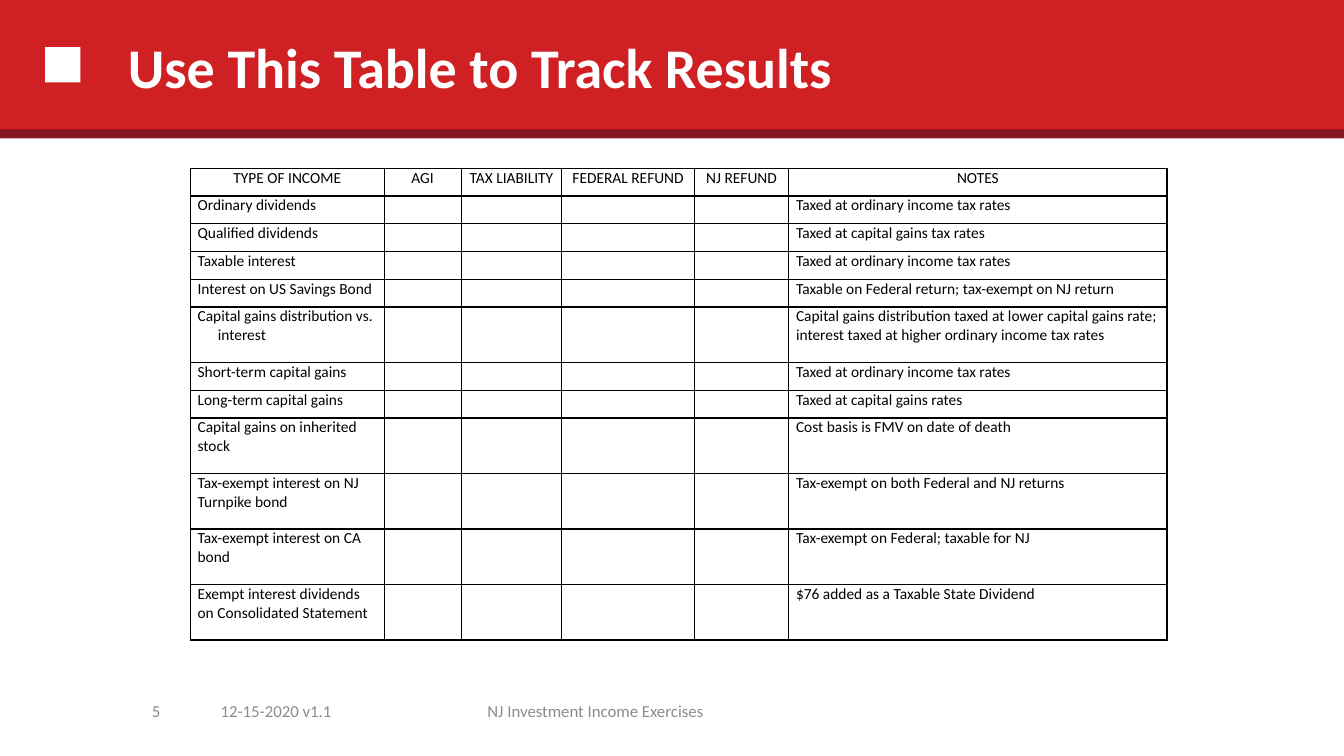
from lxml.etree import SubElement
from pptx import Presentation
from pptx.dml.color import RGBColor
from pptx.enum.shapes import MSO_SHAPE
from pptx.enum.text import MSO_ANCHOR, PP_ALIGN
from pptx.oxml.ns import qn
from pptx.util import Cm, Pt

FONT = "Calibri"
HEADINGS = ["TYPE OF INCOME", "AGI", "TAX LIABILITY", "FEDERAL REFUND", "NJ REFUND", "NOTES"]
COLUMN_WIDTHS = [4.88, 1.94, 2.54, 3.34, 2.38, 9.53]
LINE_HEIGHT = 0.7
INCOME_ROWS = [
    ("Ordinary dividends", "Taxed at ordinary income tax rates", 1),
    ("Qualified dividends", "Taxed at capital gains tax rates", 1),
    ("Taxable interest", "Taxed at ordinary income tax rates", 1),
    ("Interest on US Savings Bond", "Taxable on Federal return; tax-exempt on NJ return", 1),
    ("Capital gains distribution vs. interest",
     "Capital gains distribution taxed at lower capital gains rate; "
     "interest taxed at higher ordinary income tax rates", 2),
    ("Short-term capital gains", "Taxed at ordinary income tax rates", 1),
    ("Long-term capital gains", "Taxed at capital gains rates", 1),
    ("Capital gains on inherited stock", "Cost basis is FMV on date of death", 2),
    ("Tax-exempt interest on NJ Turnpike bond", "Tax-exempt on both Federal and NJ returns", 2),
    ("Tax-exempt interest on CA bond", "Tax-exempt on Federal; taxable for NJ", 2),
    ("Exempt interest dividends on Consolidated Statement",
     "$76 added as a Taxable State Dividend", 2),
]
HANGING_ROW = "Capital gains distribution vs. interest"


def color(value):
    """Turn a hex string into a colour."""
    return RGBColor.from_string(value)


def style(para, size, value, align=PP_ALIGN.LEFT, bold=False):
    """Set the font and alignment of a paragraph."""
    para.alignment = align
    para.font.name = FONT
    para.font.size = Pt(size)
    para.font.bold = bold
    para.font.color.rgb = color(value)


def add_block(page, left, top, width, height, fill):
    """Add a plain filled rectangle."""
    block = page.shapes.add_shape(MSO_SHAPE.RECTANGLE, Cm(left), Cm(top), Cm(width), Cm(height))
    block.shadow.inherit = False
    block.fill.solid()
    block.fill.fore_color.rgb = color(fill)
    block.line.fill.background()


def add_header(page, left, top, width, height):
    """Fill the header band and place the title on it."""
    add_block(page, left, top, width, height, "CF2124")
    add_block(page, left + 1.14, top + 1.21, 0.89, 0.89, "FFFFFF")
    add_block(page, left, top + height - 0.1, width, 0.23, "841721")
    title = page.shapes.title
    title.left, title.top = Cm(left + 2.97), Cm(top + 0.1)
    title.width, title.height = Cm(27.08), Cm(3.18)
    title.text_frame.text = "Use This Table to Track Results"
    title.text_frame.vertical_anchor = MSO_ANCHOR.MIDDLE
    style(title.text_frame.paragraphs[0], 40, "FFFFFF", bold=True)
    title.element.getparent().append(title.element)


def add_borders(cell):
    """Draw a thin black line on each side of a cell."""
    properties = cell._tc.get_or_add_tcPr()
    for position, side in enumerate(("lnL", "lnR", "lnT", "lnB")):
        line = SubElement(properties, qn(f"a:{side}"), w=str(Pt(1)))
        fill = SubElement(line, qn("a:solidFill"))
        SubElement(fill, qn("a:srgbClr"), val="000000")
        properties.insert(position, line)


def fill_cell(cell, text, align):
    """Write one table cell with its insets, font and borders."""
    cell.margin_left = cell.margin_right = Cm(0.18)
    cell.margin_top = cell.margin_bottom = 0
    cell.fill.background()
    cell.text = text
    para = cell.text_frame.paragraphs[0]
    style(para, 11, "000000", align)
    if not text:
        SubElement(para._p, qn("a:endParaRPr"), sz="1100")
    if text == HANGING_ROW:
        indent = Cm(0.51)
        para._p.get_or_add_pPr().set("marL", str(indent))
        para._p.get_or_add_pPr().set("indent", str(-indent))
    add_borders(cell)


def add_results_table(page, left, top):
    """Add the tracking table with its blank result columns."""
    blanks = [""] * (len(HEADINGS) - 2)
    rows = [HEADINGS] + [[income, *blanks, note] for income, note, _ in INCOME_ROWS]
    heights = [LINE_HEIGHT] + [LINE_HEIGHT * lines for _, _, lines in INCOME_ROWS]
    frame = page.shapes.add_table(len(rows), len(HEADINGS), Cm(left), Cm(top),
                                  Cm(sum(COLUMN_WIDTHS)), Cm(sum(heights)))
    table = frame.table
    table.first_row = table.horz_banding = False
    for column, width in zip(table.columns, COLUMN_WIDTHS):
        column.width = Cm(width)
    for index, (row, height) in enumerate(zip(table.rows, heights)):
        row.height = Cm(height)
        align = PP_ALIGN.LEFT if index else PP_ALIGN.CENTER
        for cell, text in zip(row.cells, rows[index]):
            fill_cell(cell, text, align)


def add_footer(page, left, top, height):
    """Add the page number, version date and deck name."""
    parts = [
        ("5", 0, 2.59, PP_ALIGN.RIGHT),
        ("12-15-2020 v1.1", 3.61, 3.71, PP_ALIGN.LEFT),
        ("NJ Investment Income Exercises", 7.95, 10.72, PP_ALIGN.CENTER),
    ]
    for text, offset, width, align in parts:
        box = page.shapes.add_textbox(Cm(left + offset), Cm(top), Cm(width), Cm(height))
        box.text_frame.word_wrap = True
        box.text_frame.vertical_anchor = MSO_ANCHOR.MIDDLE
        box.text_frame.text = text
        style(box.text_frame.paragraphs[0], 12, "8C8C8C", align)


def main():
    """Build the slide and save the deck."""
    deck = Presentation()
    deck.slide_width, deck.slide_height = Cm(33.87), Cm(19.05)
    page = deck.slides.add_slide(deck.slide_layouts[5])
    add_header(page, 0, -0.02, 33.87, 3.38)
    add_results_table(page, 4.8, 4.24)
    add_footer(page, 1.7, 17.4, 1.02)
    deck.save("out.pptx")


if __name__ == "__main__":
    main()
